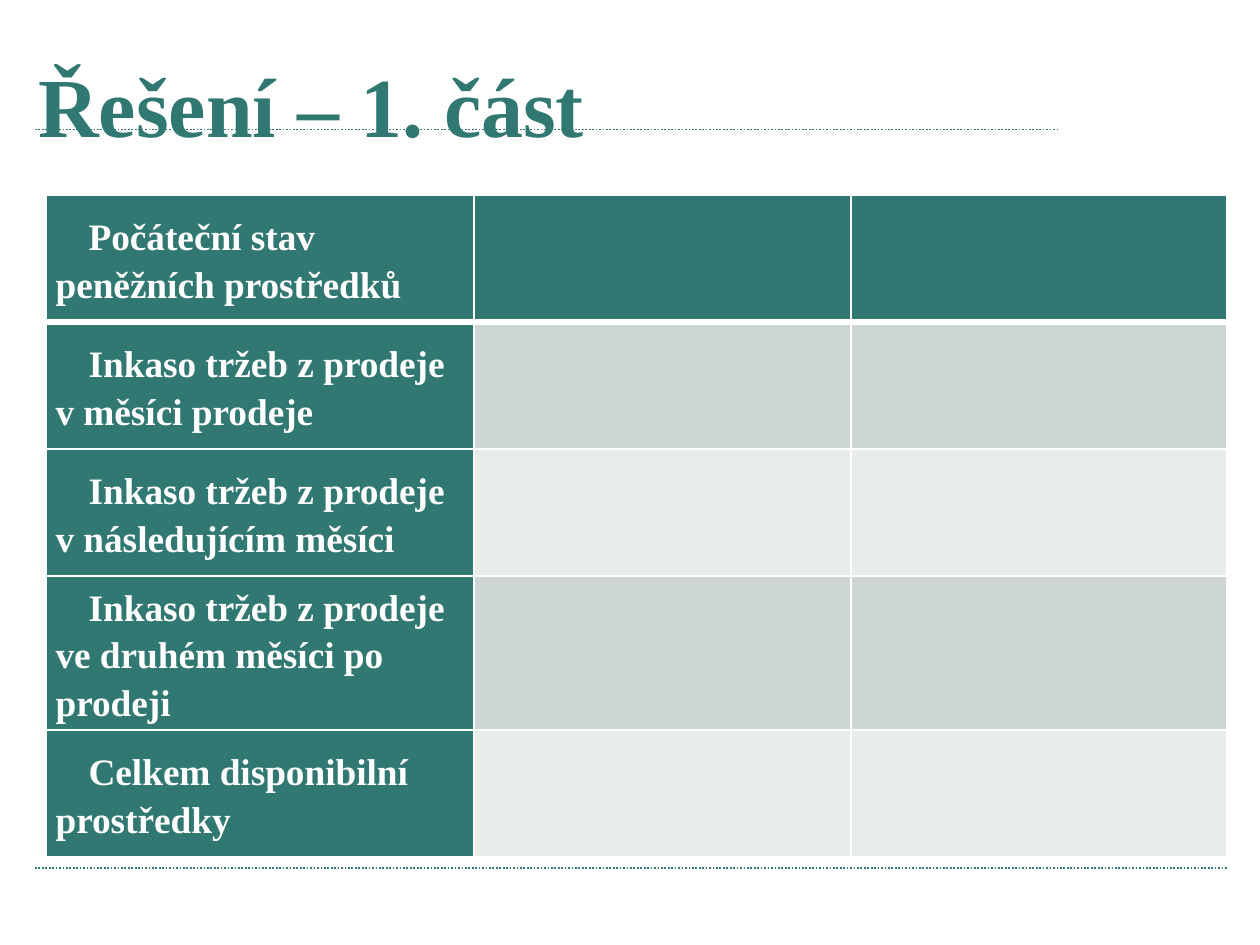
from dataclasses import dataclass

from lxml.etree import SubElement
from pptx import Presentation
from pptx.dml.color import RGBColor
from pptx.enum.dml import MSO_LINE
from pptx.enum.shapes import MSO_CONNECTOR
from pptx.enum.text import MSO_ANCHOR
from pptx.oxml.ns import qn
from pptx.slide import Slide
from pptx.table import _Cell
from pptx.text.text import _Paragraph
from pptx.util import Cm, Pt

COLORS = {"teal": "307871", "white": "FFFFFF", "dark_band": "CDD6D5", "light_band": "E8ECEB"}
FONT = "Times New Roman"
COLUMN_WIDTHS = (6.48, 5.69, 5.69)
ROW_HEIGHT = 1.92
LABELS = (
    "Počáteční stav peněžních prostředků",
    "Inkaso tržeb z prodeje v měsíci prodeje",
    "Inkaso tržeb z prodeje v následujícím měsíci",
    "Inkaso tržeb z prodeje ve druhém měsíci po prodeji",
    "Celkem disponibilní prostředky",
)


@dataclass(frozen=True)
class Rule:
    left: float
    right: float
    y: float


RULES = (Rule(0.53, 15.98, 1.96), Rule(0.53, 18.57, 13.13))


def rgb(name: str) -> RGBColor:
    return RGBColor.from_string(COLORS[name])


def format_text(p: _Paragraph, size: float, color: str) -> None:
    for r in p.runs:
        r.font.name = FONT
        r.font.size = Pt(size)
        r.font.bold = True
        r.font.color.rgb = rgb(color)


def draw_rule(slide: Slide, rule: Rule) -> None:
    line = slide.shapes.add_connector(
        MSO_CONNECTOR.STRAIGHT, Cm(rule.left), Cm(rule.y), Cm(rule.right), Cm(rule.y)
    )
    line.line.color.rgb = rgb("teal")
    line.line.width = Pt(0.75)
    line.line.dash_style = MSO_LINE.ROUND_DOT
    SubElement(line._element.spPr, qn("a:effectLst"))


def draw_title(slide: Slide, text: str) -> None:
    sp = slide.shapes.add_textbox(Cm(0.33), Cm(0.53), Cm(16.79), Cm(1.5))
    tf = sp.text_frame
    tf.word_wrap = True
    tf.vertical_anchor = MSO_ANCHOR.TOP
    tf.margin_top = Cm(0.28)
    tf.margin_bottom = 0
    tf.text = text
    format_text(tf.paragraphs[0], 36, "teal")


def set_borders(cell: _Cell, widths: dict[str, float]) -> None:
    tc_pr = cell._tc.get_or_add_tcPr()
    for side, width in widths.items():
        ln = SubElement(tc_pr, qn(f"a:ln{side}"), w=str(Pt(width)))
        fill = SubElement(ln, qn("a:solidFill"))
        SubElement(fill, qn("a:srgbClr"), val=COLORS["white"])


def write_label(cell: _Cell, text: str) -> None:
    cell.vertical_anchor = MSO_ANCHOR.MIDDLE
    cell.margin_left = cell.margin_right = Cm(0.15)
    cell.margin_top = cell.margin_bottom = 0
    cell.text_frame.text = text
    p = cell.text_frame.paragraphs[0]
    p.line_spacing = 1.15
    p.space_after = Pt(6)
    p._p.get_or_add_pPr().set("indent", str(Cm(0.5)))
    format_text(p, 16, "white")


def cell_color(row: int, column: int) -> str:
    if row == 0 or column == 0:
        return "teal"
    return "dark_band" if row % 2 else "light_band"


def draw_table(slide: Slide) -> None:
    table = slide.shapes.add_table(
        len(LABELS), len(COLUMN_WIDTHS), Cm(0.69), Cm(2.95),
        Cm(sum(COLUMN_WIDTHS)), Cm(ROW_HEIGHT * len(LABELS)),
    ).table
    table.first_col = True
    for column, width in zip(table.columns, COLUMN_WIDTHS):
        column.width = Cm(width)
    for i, label in enumerate(LABELS):
        table.rows[i].height = Cm(ROW_HEIGHT)
        for j in range(len(COLUMN_WIDTHS)):
            cell = table.cell(i, j)
            top, bottom = (3 if i == 1 else 1), (3 if i == 0 else 1)
            set_borders(cell, {"L": 1, "R": 1, "T": top, "B": bottom})
            cell.fill.solid()
            cell.fill.fore_color.rgb = rgb(cell_color(i, j))
        write_label(table.cell(i, 0), label)


def main() -> None:
    prs = Presentation()
    prs.slide_width, prs.slide_height = Cm(19.05), Cm(14.29)
    slide = prs.slides.add_slide(prs.slide_layouts[6])
    for rule in RULES:
        draw_rule(slide, rule)
    draw_title(slide, "Řešení – 1. část")
    draw_table(slide)
    prs.save("out.pptx")


if __name__ == "__main__":
    main()
